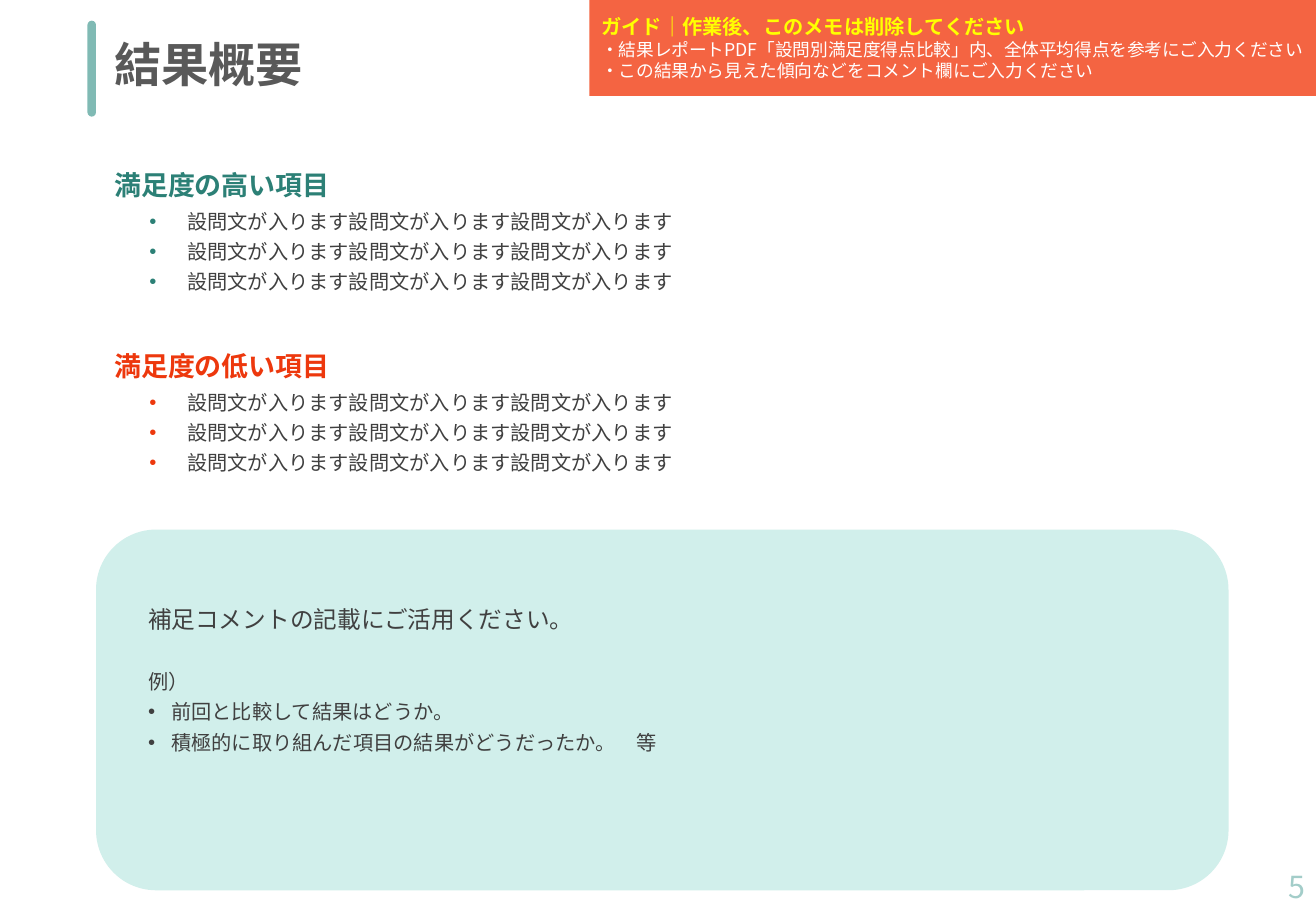
from lxml import etree
from pptx import Presentation
from pptx.dml.color import RGBColor
from pptx.enum import shapes, text
from pptx.oxml import ns
from pptx.util import Inches, Pt

FONT = "Noto Sans CJK JP"
INK = "404040"
QUESTION = "設問文が入ります設問文が入ります設問文が入ります"
SECTIONS = [
    ("満足度の高い項目", "2C8076", 1.27),
    ("満足度の低い項目", "ED380D", 2.76),
]


def rgb(value):
    return RGBColor.from_string(value)


def place(element, box):
    element.left, element.top, element.width, element.height = map(Inches, box)


def add_bullet(paragraph, indent, color):
    props = paragraph._p.get_or_add_pPr()
    props.set("marL", str(Inches(indent)))
    props.set("indent", str(-Inches(indent)))
    bullet_color = etree.SubElement(props, ns.qn("a:buClr"))
    etree.SubElement(bullet_color, ns.qn("a:srgbClr")).set("val", color)
    etree.SubElement(props, ns.qn("a:buFont")).set("typeface", "Arial")
    etree.SubElement(props, ns.qn("a:buChar")).set("char", "•")


def write(element, lines, anchor=text.MSO_ANCHOR.TOP):
    """Fill the element with (wording, size, colour, format) lines."""
    frame = element.text_frame
    frame.word_wrap = True
    frame.auto_size = text.MSO_AUTO_SIZE.NONE
    frame.vertical_anchor = anchor
    for index, (wording, size, color, look) in enumerate(lines):
        paragraph = frame.add_paragraph() if index else frame.paragraphs[0]
        layout = {
            "alignment": look.get("align", text.PP_ALIGN.LEFT),
            "line_spacing": look.get("spacing", 1.25),
            "space_before": Pt(look.get("before", 0)),
            "space_after": Pt(0),
        }
        for key, value in layout.items():
            setattr(paragraph, key, value)
        if "indent" in look:
            add_bullet(paragraph, look["indent"], look.get("bullet", color))
        run = paragraph.add_run()
        run.text = wording
        style = {"name": FONT, "size": Pt(size), "bold": look.get("bold", False)}
        for key, value in style.items():
            setattr(run.font, key, value)
        run.font.color.rgb = rgb(color)
        east_asian = etree.SubElement(run.font._element, ns.qn("a:ea"))
        east_asian.set("typeface", FONT)


def add_panel(slide, kind, box, fill):
    panel = slide.shapes.add_shape(kind, *map(Inches, box))
    panel.shadow.inherit = False
    panel.fill.solid()
    panel.fill.fore_color.rgb = rgb(fill)
    panel.line.fill.background()
    return panel


def add_text(slide, box, lines, anchor=text.MSO_ANCHOR.TOP):
    write(slide.shapes.add_textbox(*map(Inches, box)), lines, anchor)


def fill_section(heading, questions, title, color, top):
    place(heading, (0.84, top, 9.01, 0.39))
    write(heading, [(title, 16, color, {"bold": True})])
    place(questions, (1.13, top + 0.35, 8.58, 0.82))
    write(questions, [(QUESTION, 12, INK, {"indent": 0.31, "bullet": color})] * 3)


def main():
    prs = Presentation()
    prs.slide_width, prs.slide_height = Inches(10.83), Inches(7.5)
    slide = prs.slides.add_slide(prs.slide_layouts.get_by_name("Comparison"))
    title, *bodies = slide.placeholders

    place(title, (0.84, 0.31, 3.81, 0.65))
    write(title, [("結果概要", 28, "595959",
                   {"bold": True, "spacing": 0.85, "before": 13})])
    for heading, questions, section in zip(bodies[::2], bodies[1::2], SECTIONS):
        fill_section(heading, questions, *section)

    rounded = shapes.MSO_SHAPE.ROUNDED_RECTANGLE
    accent = add_panel(slide, rounded, (0.72, 0.17, 0.07, 0.79), "80BAB4")
    accent.adjustments[0] = 0.5

    add_panel(slide, rounded, (0.79, 4.36, 9.32, 2.97), "D1EFEB")
    add_text(slide, (1.12, 4.87, 8.64, 1.37), [
        ("補足コメントの記載にご活用ください。", 14, INK, {}),
        ("例）", 12, INK, {"before": 18}),
        ("前回と比較して結果はどうか。", 12, INK, {"indent": 0.19}),
        ("積極的に取り組んだ項目の結果がどうだったか。　等", 12, INK,
         {"indent": 0.19}),
    ])

    guide = add_panel(slide, shapes.MSO_SHAPE.RECTANGLE, (4.85, 0, 5.98, 0.79),
                      "F46442")
    write(guide, [
        ("ガイド｜作業後、このメモは削除してください", 12, "FFFF00",
         {"bold": True, "spacing": 1.0}),
        ("・結果レポートPDF「設問別満⾜度得点⽐較」内、全体平均得点を参考にご入力ください",
         10.5, "FFFFFF", {"spacing": 1.0}),
        ("・この結果から見えた傾向などをコメント欄にご入力ください", 10.5, "FFFFFF",
         {"spacing": 1.0}),
    ], text.MSO_ANCHOR.MIDDLE)

    add_text(slide, (8.4, 7.1, 2.44, 0.4), [
        ("5", 18, "A3CDC9", {"align": text.PP_ALIGN.RIGHT, "spacing": 1.0}),
    ], text.MSO_ANCHOR.MIDDLE)
    prs.save("out.pptx")


if __name__ == "__main__":
    main()
